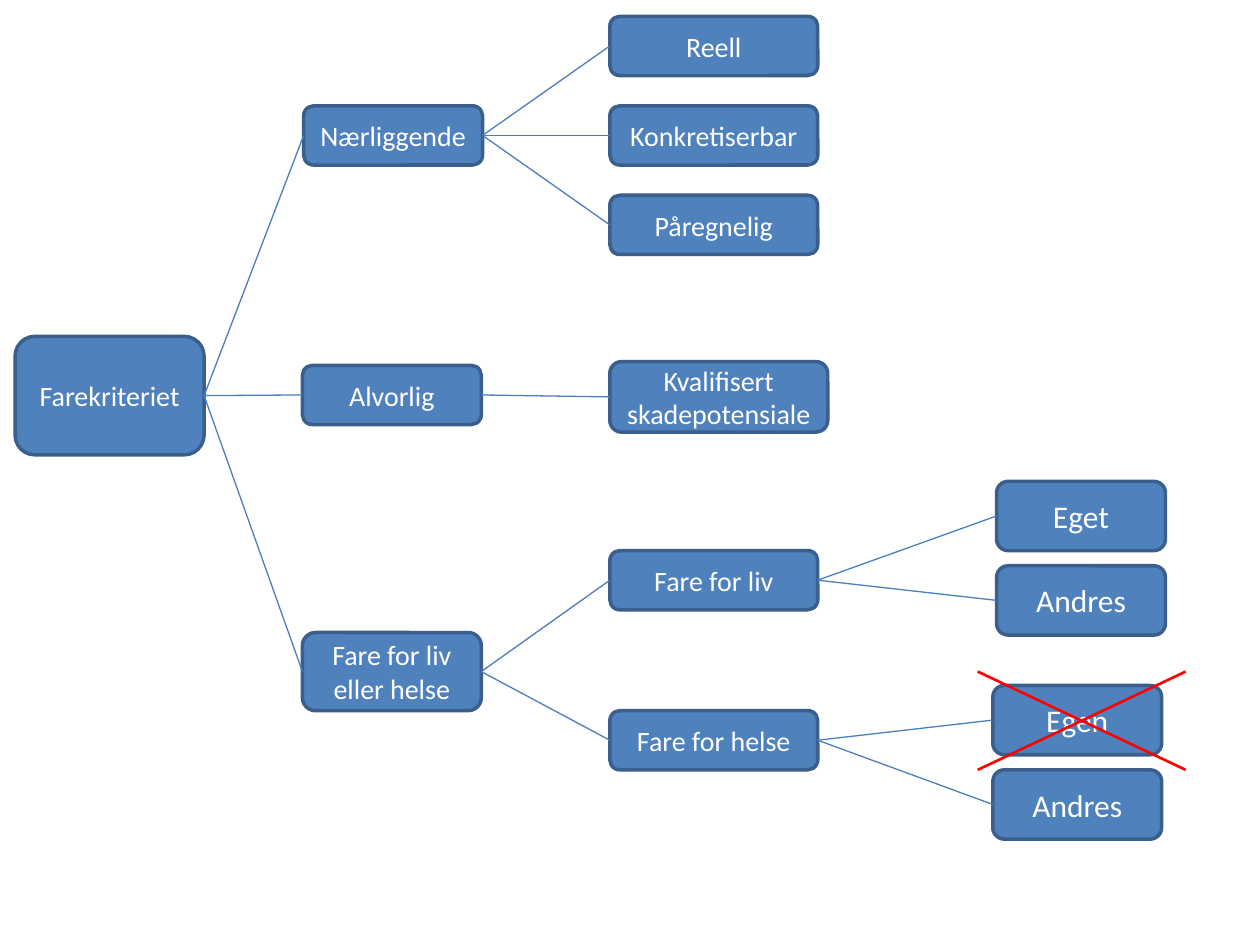
"""Build the Farekriteriet tree slide."""
from pptx import Presentation
from pptx.dml.color import RGBColor
from pptx.enum.shapes import MSO_CONNECTOR, MSO_SHAPE
from pptx.enum.text import MSO_ANCHOR, PP_ALIGN
from pptx.oxml.ns import qn
from pptx.util import Inches, Pt
from lxml import etree

ROUND = MSO_SHAPE.ROUNDED_RECTANGLE
LINE = MSO_CONNECTOR.STRAIGHT
MIDDLE, CENTER = MSO_ANCHOR.MIDDLE, PP_ALIGN.CENTER
LEFT, RIGHT = 1, 3
FILL, EDGE, LINK, RED, WHITE = "4F81BD", "3A5F8C", "4B7EBC", "FF0000", "FFFFFF"
FONT = "Calibri"

# (text, parent index, left, top, width, height, size)
NODES = [
    ("Farekriteriet", None, 0.12, 2.67, 1.5, 0.94, 16),
    ("Nærliggende", 0, 2.41, 0.84, 1.42, 0.47, 16),
    ("Alvorlig", 0, 2.4, 2.9, 1.42, 0.47, 16),
    ("Fare for liv eller helse", 0, 2.4, 5.02, 1.42, 0.62, 16),
    ("Reell", 1, 4.84, 0.13, 1.65, 0.47, 16),
    ("Konkretiserbar", 1, 4.84, 0.84, 1.65, 0.47, 16),
    ("Påregnelig", 1, 4.84, 1.55, 1.65, 0.47, 16),
    ("Kvalifisert skadepotensiale", 2, 4.84, 2.87, 1.73, 0.56, 16),
    ("Fare for liv", 3, 4.84, 4.37, 1.65, 0.47, 16),
    ("Fare for helse", 3, 4.84, 5.64, 1.65, 0.47, 16),
    ("Eget", 8, 7.91, 3.82, 1.34, 0.55, 18),
    ("Andres", 8, 7.91, 4.49, 1.34, 0.55, 18),
    ("Egen", 9, 7.88, 5.44, 1.34, 0.55, 18),
    ("Andres", 9, 7.88, 6.11, 1.34, 0.55, 18),
]
CROSS = [(7.76, 5.33, 9.41, 6.11), (7.76, 6.11, 9.41, 5.33)]


def color(text):
    return RGBColor.from_string(text)


def add_node(slide, text, box, size):
    node = slide.shapes.add_shape(ROUND, *map(Inches, box))
    node.shadow.inherit = False
    node.fill.solid()
    node.fill.fore_color.rgb = color(FILL)
    node.line.color.rgb = color(EDGE)
    node.line.width = Pt(2)
    frame = node.text_frame
    frame.word_wrap = True
    frame.vertical_anchor = MIDDLE
    para = frame.paragraphs[0]
    para.alignment = CENTER
    run = para.add_run()
    run.text = text
    run.font.name = FONT
    run.font.size = Pt(size)
    run.font.color.rgb = color(WHITE)
    return node


def add_line(slide, ends, tint, width):
    line = slide.shapes.add_connector(LINE, *map(Inches, ends))
    line.line.color.rgb = color(tint)
    line.line.width = Pt(width)
    etree.SubElement(line._element.spPr, qn("a:effectLst"))
    return line


def main():
    deck = Presentation()
    deck.slide_width, deck.slide_height = Inches(10), Inches(7.5)
    slide = deck.slides.add_slide(deck.slide_layouts[6])
    nodes = [add_node(slide, text, box, size) for text, _, *box, size in NODES]
    for node, (_, parent, *_) in zip(nodes, NODES):
        if parent is not None:
            link = add_line(slide, (0, 0, 1, 1), LINK, 0.75)
            link.begin_connect(nodes[parent], RIGHT)
            link.end_connect(node, LEFT)
    for ends in CROSS:
        add_line(slide, ends, RED, 1.5)
    deck.save("out.pptx")


if __name__ == "__main__":
    main()
